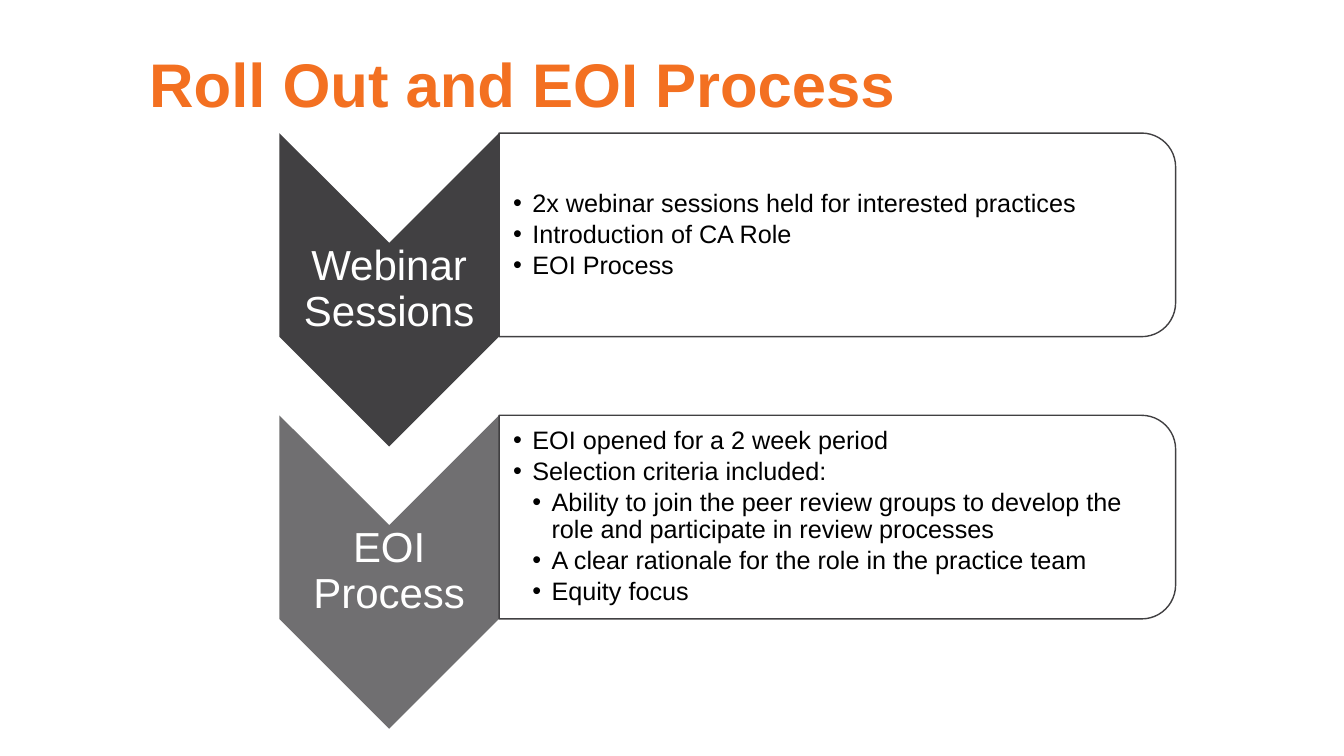
from lxml import etree
from pptx import Presentation
from pptx import util as u
from pptx.dml.color import RGBColor
from pptx.enum import shapes, text
from pptx.oxml.ns import qn

COLORS = {"orange": "F37021", "charcoal": "414042", "white": "FFFFFF", "black": "000000"}
FONT = "Arial"
TITLE = {"size": u.Pt(44), "bold": True}
LABEL = {"size": u.Pt(30), "bold": False}
BODY = {"size": u.Pt(18), "bold": False}

STEP_TOP, STEP_PITCH = 1.32, 2.8
CHEVRON_LENGTH, CHEVRON_WIDTH = 3.11, 2.18
PANEL_LENGTH, PANEL_HEIGHT = 6.71, 2.02
LEFT = 2.77
PANEL_LEFT = LEFT + CHEVRON_WIDTH
BULLET_INDENT = 0.19

STEPS = [
    ("Webinar Sessions", 100, [
        (1, "2x webinar sessions held for interested practices"),
        (1, "Introduction of CA Role"),
        (1, "EOI Process"),
    ]),
    ("EOI Process", 75, [
        (1, "EOI opened for a 2 week period"),
        (1, "Selection criteria included:"),
        (2, "Ability to join the peer review groups to develop the role "
            "and participate in review processes"),
        (2, "A clear rationale for the role in the practice team"),
        (2, "Equity focus"),
    ]),
]


class SlideBuilder:
    def __init__(self, presentation):
        self.slide = presentation.slides.add_slide(presentation.slide_layouts[5])

    def color(self, name):
        return RGBColor.from_string(COLORS[name])

    def format_paragraph(self, paragraph, color, style, alignment=text.PP_ALIGN.LEFT):
        paragraph.alignment = alignment
        paragraph.line_spacing = 0.9
        for name, value in {"name": FONT, **style}.items():
            setattr(paragraph.font, name, value)
        paragraph.font.color.rgb = self.color(color)

    def format_frame(self, frame, margins):
        settings = {"word_wrap": True, "auto_size": text.MSO_AUTO_SIZE.NONE,
                    "vertical_anchor": text.MSO_ANCHOR.MIDDLE}
        sides = ("left", "top", "right", "bottom")
        settings.update({f"margin_{side}": u.Inches(margin)
                         for side, margin in zip(sides, margins)})
        for name, value in settings.items():
            setattr(frame, name, value)

    def title(self, wording, left, top, width, height):
        shape = self.slide.shapes.title
        for name, value in zip(("left", "top", "width", "height"), (left, top, width, height)):
            setattr(shape, name, u.Inches(value))
        shape.text_frame.text = wording
        self.format_frame(shape.text_frame, (0.1, 0.05, 0.1, 0.05))
        self.format_paragraph(shape.text_frame.paragraphs[0], "orange", TITLE)

    def turned_shape(self, kind, left, top, width, height, fill, opacity, line=None):
        """Place a shape turned by 90 degrees; the box given is the one seen on the slide."""
        shift = (width - height) / 2
        shape = self.slide.shapes.add_shape(
            kind, u.Inches(left + shift), u.Inches(top - shift),
            u.Inches(height), u.Inches(width))
        shape.rotation = 90
        shape.shadow.inherit = False
        shape.fill.solid()
        shape.fill.fore_color.rgb = self.color(fill)
        if opacity < 100:
            swatch = shape.fill._xPr.find(".//" + qn("a:srgbClr"))
            etree.SubElement(swatch, qn("a:alpha"), val=str(opacity * 1000))
        if line:
            shape.line.color.rgb = self.color(line)
            shape.line.width = u.Pt(1)
        else:
            shape.line.fill.background()

    def text_box(self, left, top, width, height, margins):
        box = self.slide.shapes.add_textbox(*map(u.Inches, (left, top, width, height)))
        self.format_frame(box.text_frame, margins)
        return box.text_frame

    def label(self, wording, left, top, width, height):
        paragraph = self.text_box(left, top, width, height, (0.02,) * 4).paragraphs[0]
        paragraph.text = wording
        self.format_paragraph(paragraph, "white", LABEL, text.PP_ALIGN.CENTER)

    def bullets(self, items, left, top, width, height):
        frame = self.text_box(left, top, width, height, (0.14, 0.01, 0.01, 0.01))
        for index, (level, wording) in enumerate(items):
            paragraph = frame.add_paragraph() if index else frame.paragraphs[0]
            paragraph.text = wording
            paragraph.level = level
            properties = paragraph._p.get_or_add_pPr()
            properties.set("marL", str(u.Inches(BULLET_INDENT * level)))
            properties.set("indent", str(-u.Inches(BULLET_INDENT)))
            etree.SubElement(properties, qn("a:buFont"), typeface=FONT)
            etree.SubElement(properties, qn("a:buChar"), char="•")
            self.format_paragraph(paragraph, "black", BODY)
            paragraph.space_after = u.Pt(2.7)

    def step(self, top, name, opacity, items):
        self.turned_shape(shapes.MSO_SHAPE.CHEVRON, LEFT, top, CHEVRON_WIDTH,
                          CHEVRON_LENGTH, "charcoal", opacity)
        self.label(name, LEFT, top + CHEVRON_WIDTH / 2, CHEVRON_WIDTH,
                   CHEVRON_LENGTH - CHEVRON_WIDTH)
        self.turned_shape(shapes.MSO_SHAPE.ROUND_2_SAME_RECTANGLE, PANEL_LEFT, top,
                          PANEL_LENGTH, PANEL_HEIGHT, "white", 90, "charcoal")
        self.bullets(items, PANEL_LEFT, top + 0.1, PANEL_LENGTH - 0.1, PANEL_HEIGHT - 0.2)


def main():
    presentation = Presentation()
    presentation.slide_width = u.Inches(13.33)
    presentation.slide_height = u.Inches(7.5)
    builder = SlideBuilder(presentation)
    builder.title("Roll Out and EOI Process", 1.38, 0.42, 11.67, 0.9)
    for index, step in enumerate(STEPS):
        builder.step(STEP_TOP + index * STEP_PITCH, *step)
    presentation.save("out.pptx")


if __name__ == "__main__":
    main()
